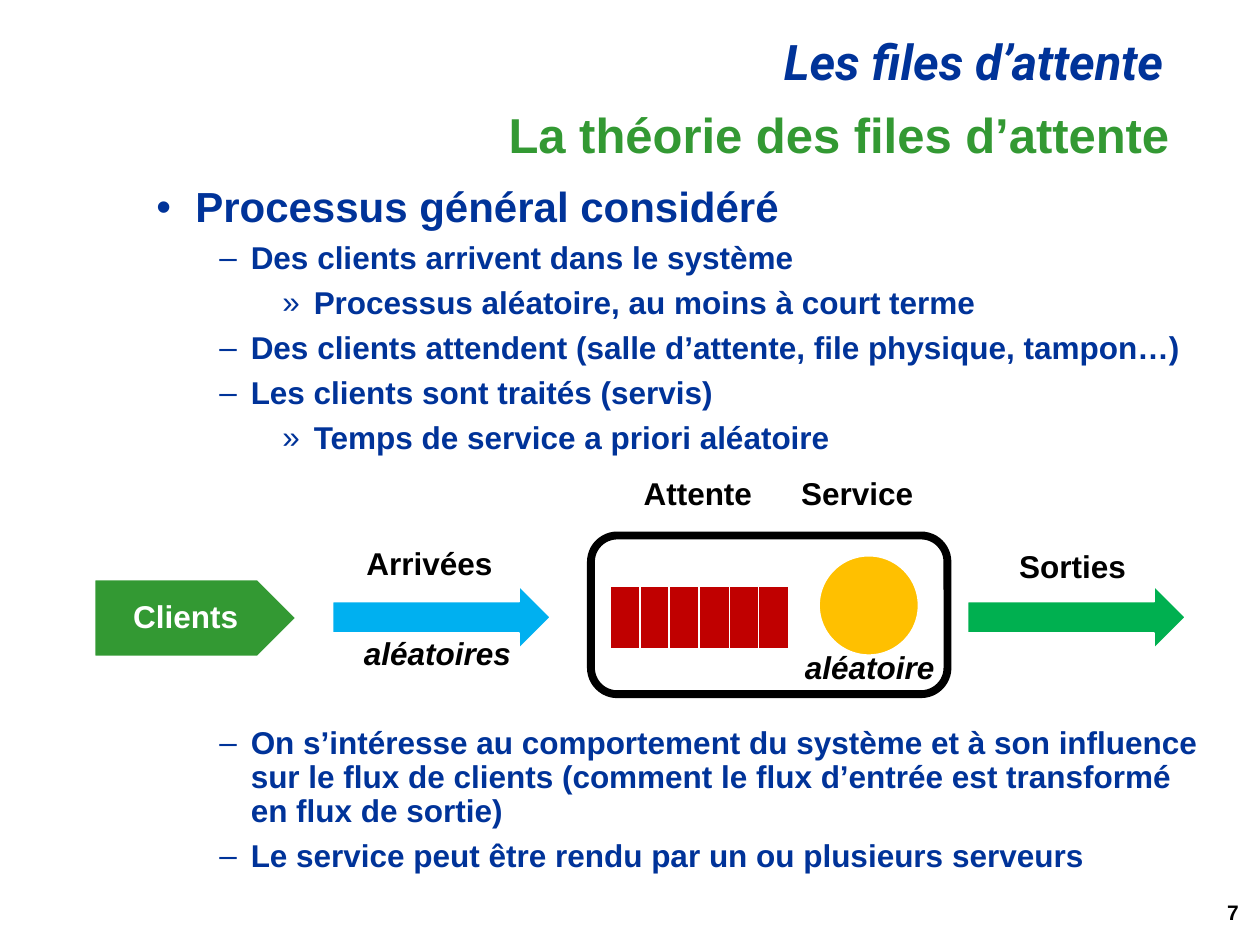
from lxml.etree import SubElement
from pptx import Presentation
from pptx.dml.color import RGBColor
from pptx.enum.shapes import MSO_SHAPE as Shape
from pptx.enum.text import MSO_ANCHOR as Anchor, MSO_AUTO_SIZE as AutoSize, PP_ALIGN as Align
from pptx.oxml.ns import qn
from pptx.util import Emu, Pt

PX = 9144  # 100 px to the inch
COLORS = {
    "navy": "003399", "green": "339933", "black": "000000", "white": "FFFFFF",
    "sky": "00B0F0", "red": "C00000", "amber": "FFC000", "emerald": "00B050",
}
# Per level: bullet, text indent px, hanging px, size pt, space before pt
LEVELS = [("•", 31, 31, 24, 0), ("–", 75, 25, 18, 6.2), ("»", 125, 25, 18, 6.2)]
DIAGRAM_GAP = 155  # pt left free in the list for the diagram


def px(*lengths):
    return [Emu(length * PX) for length in lengths]


class SlideBuilder:
    def __init__(self, slide, font="Arial"):
        self.slide = slide
        self.font = font

    def color(self, name):
        return RGBColor.from_string(COLORS[name])

    def add_run(self, paragraph, text, size, color, italic=False, font=None):
        run = paragraph.add_run()
        run.text = text
        run.font.name = font or self.font
        run.font.size = Pt(size)
        run.font.bold = True
        run.font.italic = italic
        run.font.color.rgb = self.color(color)

    def place(self, holder, box):
        holder.left, holder.top, holder.width, holder.height = px(*box)
        holder.text_frame.auto_size = AutoSize.NONE

    def title(self, text, box):
        holder = self.slide.shapes.title
        self.place(holder, box)
        holder.text_frame.vertical_anchor = Anchor.MIDDLE
        paragraph = holder.text_frame.paragraphs[0]
        paragraph.alignment = Align.RIGHT
        paragraph.line_spacing = 0.9
        self.add_run(paragraph, text, 28, "green")

    def bullets(self, items, box):
        holder = self.slide.placeholders[1]
        self.place(holder, box)
        frame = holder.text_frame
        for i, (level, text, gap) in enumerate(items):
            paragraph = frame.add_paragraph() if i else frame.paragraphs[0]
            mark, indent, hanging, size, before = LEVELS[level]
            paragraph.level = level
            paragraph.line_spacing = 0.9
            paragraph.space_before = Pt(gap or before)
            paragraph.space_after = Pt(0)
            props = paragraph._p.get_or_add_pPr()
            props.set("marL", str(indent * PX))
            props.set("indent", str(-hanging * PX))
            SubElement(props, qn("a:buFont")).set("typeface", self.font)
            SubElement(props, qn("a:buChar")).set("char", mark)
            self.add_run(paragraph, text, size, "navy")

    def text(self, text, box, size=18, color="black", align=Align.LEFT,
             wrap=False, anchor=Anchor.TOP, italic=False, font=None):
        frame = self.slide.shapes.add_textbox(*px(*box)).text_frame
        frame.word_wrap = wrap
        frame.vertical_anchor = anchor
        paragraph = frame.paragraphs[0]
        paragraph.alignment = align
        paragraph.line_spacing = 0.9
        self.add_run(paragraph, text, size, color, italic, font)

    def shape(self, kind, box, fill=None, line="white", weight=1, text=None):
        shape = self.slide.shapes.add_shape(kind, *px(*box))
        shape.shadow.inherit = False
        if fill:
            shape.fill.solid()
            shape.fill.fore_color.rgb = self.color(fill)
        else:
            shape.fill.background()
        shape.line.color.rgb = self.color(line)
        shape.line.width = Pt(weight)
        if text:
            shape.text_frame.vertical_anchor = Anchor.MIDDLE
            paragraph = shape.text_frame.paragraphs[0]
            paragraph.alignment = Align.CENTER
            paragraph.line_spacing = 0.9
            self.add_run(paragraph, text, 18, "white")


def main():
    deck = Presentation()
    deck.slide_width, deck.slide_height = px(1000, 750)
    page = SlideBuilder(deck.slides.add_slide(deck.slide_layouts[1]))

    # Headings and page number
    page.text("Les files d’attente", (125, 25, 808, 52), size=28, color="navy",
              align=Align.RIGHT, wrap=True, italic=True, font="Roboto")
    page.title("La théorie des files d’attente", (146, 84, 792, 50))
    page.text("7", (768, 705, 225, 40), size=12, align=Align.RIGHT,
              wrap=True, anchor=Anchor.MIDDLE)

    # Process description, around the diagram
    page.bullets([
        (0, "Processus général considéré", None),
        (1, "Des clients arrivent dans le système", None),
        (2, "Processus aléatoire, au moins à court terme", None),
        (1, "Des clients attendent (salle d’attente, file physique, tampon…)", None),
        (1, "Les clients sont traités (servis)", None),
        (2, "Temps de service a priori aléatoire", None),
        (1, "On s’intéresse au comportement du système et à son influence sur le flux "
            "de clients (comment le flux d’entrée est transformé en flux de sortie)",
         DIAGRAM_GAP),
        (1, "Le service peut être rendu par un ou plusieurs serveurs", None),
    ], (114, 143, 856, 611))

    # Flow: arrivals, waiting line, server, departures
    page.shape(Shape.RIGHT_ARROW, (264, 465, 173, 50), "sky")
    queue_left, queue_width, places = 484, 142, 6
    edges = [queue_left + round(i * queue_width / places) for i in range(places + 1)]
    for left, right in zip(edges, edges[1:]):
        page.shape(Shape.RECTANGLE, (left, 465, right - left, 50), "red")
    page.shape(Shape.OVAL, (650, 441, 79, 79), "amber")
    page.shape(Shape.RIGHT_ARROW, (768, 465, 173, 50), "emerald")
    page.shape(Shape.ROUNDED_RECTANGLE, (469, 425, 283, 126), line="black", weight=4.5)
    page.shape(Shape.PENTAGON, (75, 460, 160, 61), "green", text="Clients")

    # Flow labels
    for label, left, top, width, italic in [
        ("Arrivées", 281, 430, 121, False),
        ("Sorties", 799, 433, 106, False),
        ("Attente", 501, 375, 107, False),
        ("Service", 626, 375, 110, False),
        ("aléatoires", 279, 502, 138, True),
        ("aléatoire", 629, 513, 124, True),
    ]:
        page.text(label, (left, top, width, 37), italic=italic)

    deck.save("out.pptx")


if __name__ == "__main__":
    main()
